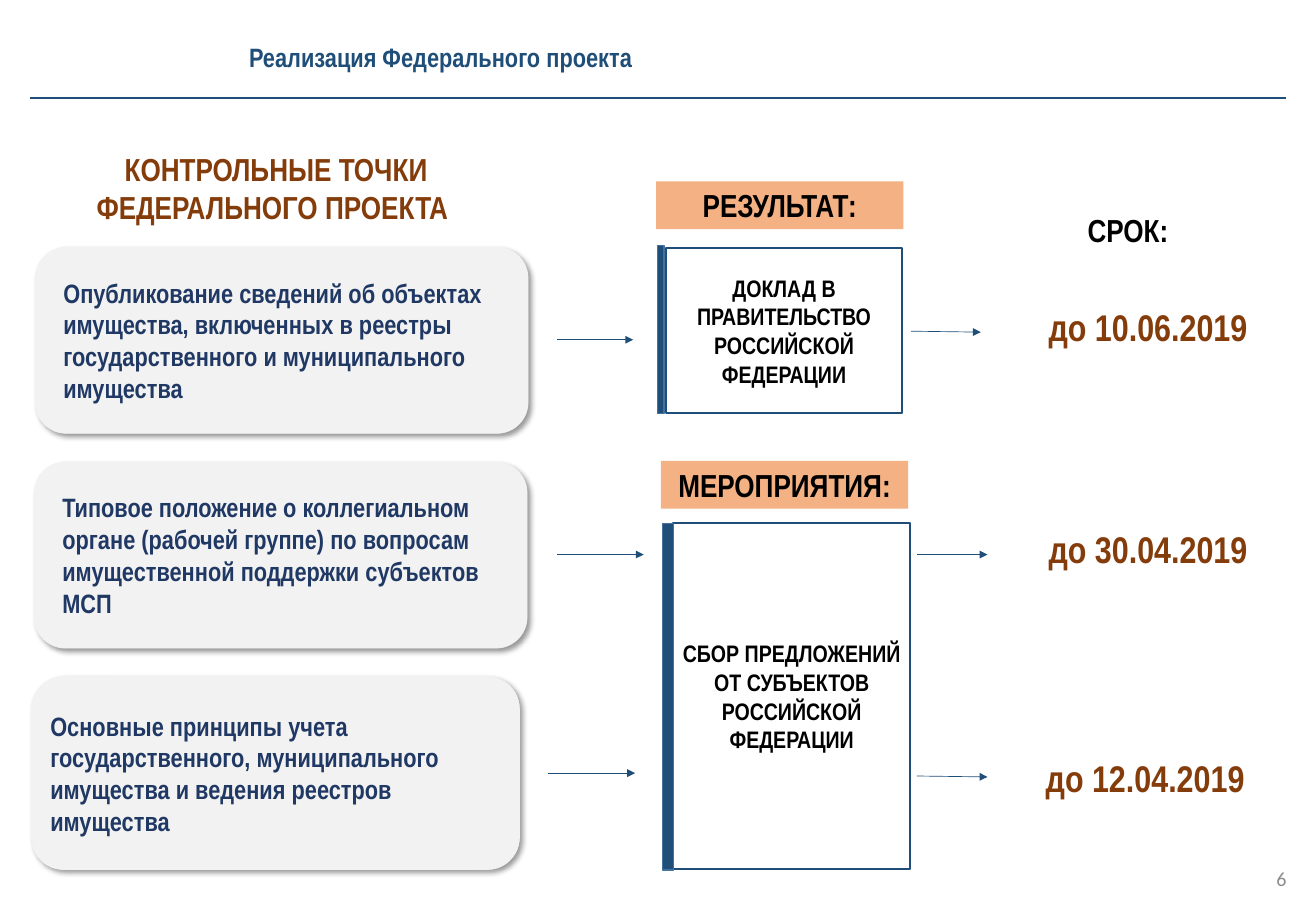
from lxml import etree
from pptx import Presentation
from pptx.dml.color import RGBColor
from pptx.enum.shapes import MSO_CONNECTOR, MSO_SHAPE
from pptx.enum.text import MSO_ANCHOR, MSO_AUTO_SIZE, PP_ALIGN
from pptx.oxml import parse_xml
from pptx.oxml.ns import qn
from pptx.util import Inches, Pt

LEFT, CENTER, RIGHT = PP_ALIGN.LEFT, PP_ALIGN.CENTER, PP_ALIGN.RIGHT
TOP, MIDDLE = MSO_ANCHOR.TOP, MSO_ANCHOR.MIDDLE
GROW, FIXED = MSO_AUTO_SIZE.SHAPE_TO_FIT_TEXT, MSO_AUTO_SIZE.NONE
RECTANGLE, ROUNDED = MSO_SHAPE.RECTANGLE, MSO_SHAPE.ROUNDED_RECTANGLE
PROCESS, STRAIGHT = MSO_SHAPE.FLOWCHART_PROCESS, MSO_CONNECTOR.STRAIGHT

BLUE = RGBColor(0x1F, 0x4E, 0x79)
BAR_EDGE = RGBColor(0x43, 0x73, 0x9E)
NAVY = RGBColor(0x20, 0x38, 0x64)
BROWN = RGBColor(0x84, 0x3C, 0x0B)
ORANGE = RGBColor(0xF4, 0xB1, 0x83)
PALE = RGBColor(0xF2, 0xF2, 0xF2)
GRAY = RGBColor(0x8C, 0x8C, 0x8C)
WHITE = RGBColor(0xFF, 0xFF, 0xFF)
BLACK = RGBColor(0, 0, 0)

CARD_SHADOW = (
    '<a:effectLst xmlns:a="http://schemas.openxmlformats.org/drawingml/2006/main">'
    '<a:outerShdw blurRad="50800" dist="38100" dir="2700000" algn="tl" rotWithShape="0">'
    '<a:srgbClr val="000000"><a:alpha val="40000"/></a:srgbClr>'
    '</a:outerShdw></a:effectLst>'
)

deck = Presentation()
deck.slide_width, deck.slide_height = Inches(13.78), Inches(9.45)
slide = deck.slides.add_slide(deck.slide_layouts[6])
shapes = slide.shapes


def add_box(place, text="", size=20, color=BLACK, align=CENTER, anchor=TOP, fit=GROW,
            kind=None, fill=None, edge=None, edge_width=1, font="Arial Narrow", bold=True):
    """Add a text box, or a filled shape when a kind is given."""
    area = [Inches(length) for length in place]
    if kind is None:
        box = shapes.add_textbox(*area)
    else:
        box = shapes.add_shape(kind, *area)
        box.shadow.inherit = False
        box.fill.solid()
        box.fill.fore_color.rgb = fill
        if edge is None:
            box.line.fill.background()
        else:
            box.line.color.rgb = edge
            box.line.width = Pt(edge_width)
    if text:
        frame = box.text_frame
        frame.word_wrap, frame.auto_size, frame.vertical_anchor = True, fit, anchor
        para = frame.paragraphs[0]
        para.text, para.alignment = text, align
        para.font.name, para.font.size, para.font.bold = font, Pt(size), bold
        para.font.color.rgb = color
    return box


def add_line(start_x, start_y, end_x, end_y, width, arrow=False):
    line = shapes.add_connector(STRAIGHT, Inches(start_x), Inches(start_y),
                                Inches(end_x), Inches(end_y))
    line.line.color.rgb = BLUE
    line.line.width = Pt(width)
    if arrow:
        etree.SubElement(line.line._get_or_add_ln(), qn("a:tailEnd"), type="triangle")
    etree.SubElement(line._element.spPr, qn("a:effectLst"))


# Header
add_line(0.31, 1.03, 13.47, 1.03, 1.75)
add_box((2.51, 0.38, 9.23, 0.44), "Реализация Федерального проекта", color=BLUE, align=LEFT)

# Column headings
add_box((0.25, 1.52, 5.28, 0.91), "КОНТРОЛЬНЫЕ ТОЧКИ ФЕДЕРАЛЬНОГО ПРОЕКТА ", 24, BROWN)
add_box((10.37, 2.16, 2.88, 0.5), "СРОК:", 24)

# Checkpoint cards
for place, indent, text in (
    ((0.37, 2.59, 5.16, 1.95), 0.1,
     "Опубликование сведений об объектах имущества, включенных в реестры "
     "государственного и муниципального имущества"),
    ((0.36, 4.84, 5.16, 1.95), 0.1,
     "Типовое положение о коллегиальном органе (рабочей группе) по вопросам "
     "имущественной поддержки субъектов МСП"),
    ((0.33, 7.09, 5.11, 2.02), 0,
     "Основные принципы учета государственного, муниципального имущества "
     "и ведения реестров имущества"),
):
    card = add_box(place, text, color=NAVY, align=LEFT, anchor=MIDDLE, fit=FIXED,
                   kind=ROUNDED, fill=PALE, edge=PALE, edge_width=0.5)
    properties = card._element.spPr
    properties.replace(properties.find(qn("a:effectLst")), parse_xml(CARD_SHADOW))
    if indent:
        card.text_frame.paragraphs[0]._p.get_or_add_pPr().set("marL", str(Inches(indent)))

# Result and activity blocks: label, framed text, upright bar
for label_place, label, frame_place, text, bar_place in (
    ((6.87, 1.9, 2.59, 0.5), "РЕЗУЛЬТАТ:", (6.97, 2.6, 2.48, 1.73),
     "ДОКЛАД В ПРАВИТЕЛЬСТВО РОССИЙСКОЙ ФЕДЕРАЦИИ", (6.04, 3.42, 1.76, 0.07)),
    ((6.92, 4.83, 2.59, 0.5), "МЕРОПРИЯТИЯ:", (7.05, 5.48, 2.48, 3.63),
     "СБОР ПРЕДЛОЖЕНИЙ ОТ СУБЪЕКТОВ РОССИЙСКОЙ ФЕДЕРАЦИИ", (5.18, 7.24, 3.63, 0.12)),
):
    add_box(label_place, label, 24, kind=RECTANGLE, fill=ORANGE)
    add_box(frame_place, text, 18, anchor=MIDDLE, fit=FIXED, kind=PROCESS,
            fill=WHITE, edge=BLUE, edge_width=1.5)
    bar = add_box(bar_place, kind=RECTANGLE, fill=BLUE, edge=BAR_EDGE)
    bar.rotation = 270

# Arrows from cards to blocks, then from blocks to dates
for ends in (
    (5.83, 3.56, 6.63, 3.56), (5.83, 5.81, 6.74, 5.81), (5.74, 8.1, 6.65, 8.1),
    (9.54, 3.47, 10.27, 3.48), (9.6, 5.81, 10.34, 5.81), (9.6, 8.13, 10.34, 8.14),
):
    add_line(*ends, 0.5, arrow=True)

# Due dates
for left, top, date in ((10.79, 3.14, "10.06.2019"), (10.79, 5.47, "30.04.2019"),
                        (10.76, 7.86, "12.04.2019")):
    add_box((left, top, 2.46, 0.57), f"до {date}", 28, BROWN)

# Page number
add_box((10.47, 8.95, 3.1, 0.5), "6", 15.1, GRAY, RIGHT, MIDDLE, FIXED,
        font="Calibri", bold=False)

deck.save("out.pptx")
